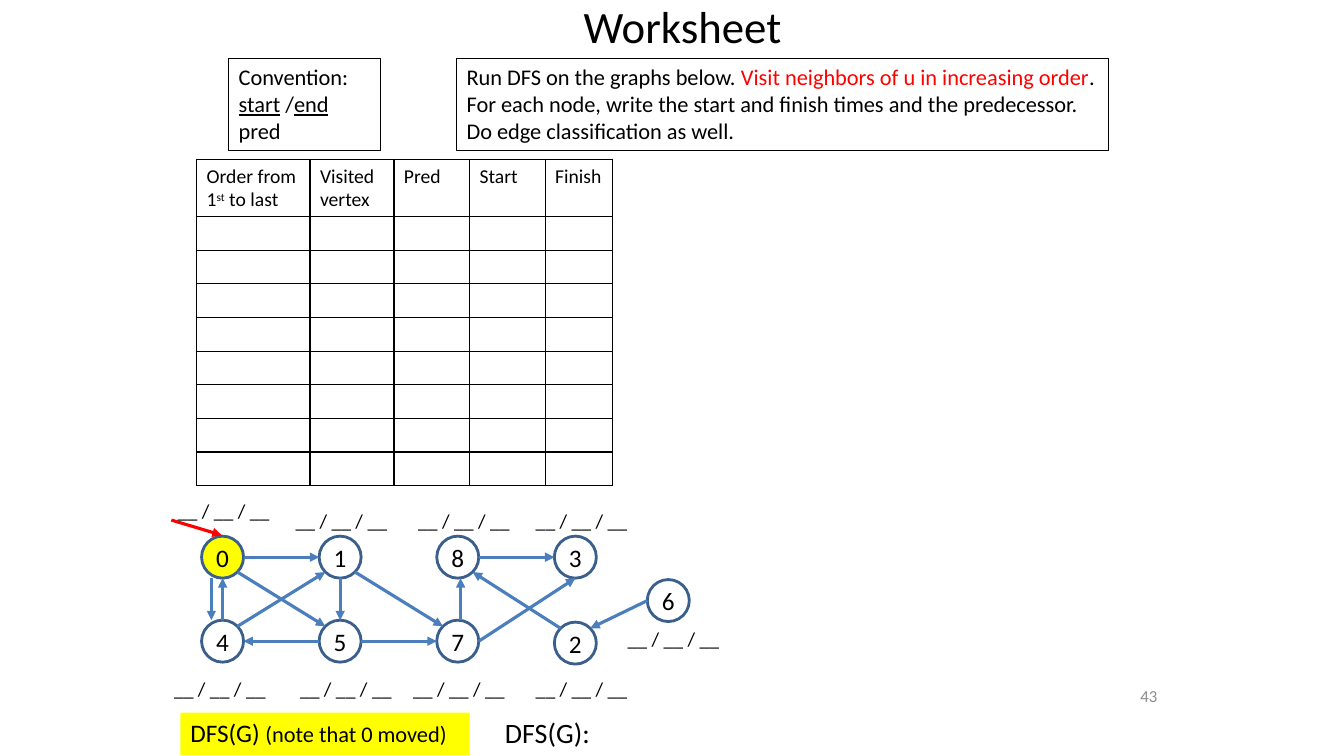
from lxml.etree import SubElement
from pptx import Presentation
from pptx.dml.color import RGBColor
from pptx.enum.shapes import MSO_CONNECTOR, MSO_SHAPE
from pptx.enum.text import MSO_ANCHOR, MSO_AUTO_SIZE, PP_ALIGN
from pptx.oxml import parse_xml
from pptx.oxml.ns import nsdecls, qn
from pptx.util import Pt

COLORS = {
    "text": "000000", "alert": "FF0000", "highlight": "FFFF00",
    "ring": "3A5F8C", "edge": "4B7EBC", "page": "8C8C8C",
}
FONT = "Calibri"
BLANKS = "__ / __ / __"

# Graph geometry: node centres, compass points on the ring
RADIUS = 15
DIAGONAL = RADIUS * 0.707
COLUMNS = [159 + 84 * i for i in range(4)]
TOP_ROW, BOTTOM_ROW = 398, 458
NODES = {
    "0": (COLUMNS[0], TOP_ROW), "1": (COLUMNS[1], TOP_ROW),
    "8": (COLUMNS[2], TOP_ROW), "3": (COLUMNS[3], TOP_ROW),
    "4": (COLUMNS[0], BOTTOM_ROW), "5": (COLUMNS[1], BOTTOM_ROW),
    "7": (COLUMNS[2], BOTTOM_ROW), "2": (COLUMNS[3], BOTTOM_ROW + 1.4),
    "6": (477.4, 429),
}
COMPASS = {
    "N": (0, -RADIUS), "S": (0, RADIUS), "W": (-RADIUS, 0), "E": (RADIUS, 0),
    "NW": (-DIAGONAL, -DIAGONAL), "NE": (DIAGONAL, -DIAGONAL),
    "SW": (-DIAGONAL, DIAGONAL), "SE": (DIAGONAL, DIAGONAL),
}
# Source, leaving point, target, arriving point, sideways shift
EDGES = [
    ("0", "E", "1", "W", 0), ("5", "W", "4", "E", 0), ("5", "E", "7", "W", 0),
    ("7", "E", "3", "S", 0), ("8", "E", "3", "W", 0), ("4", "N", "0", "S", 0),
    ("1", "S", "5", "N", 0), ("7", "N", "8", "S", 2), ("4", "NE", "1", "SW", 0),
    ("0", "SE", "5", "NW", 0), ("1", "SE", "7", "NW", 0),
    ("0", "S", "4", "N", -8), ("2", "NW", "8", "SE", 0), ("6", "W", "2", "NE", 0),
]
TIME_LABELS = [
    (120, 352.8), (204, 360), (291.6, 360), (375.6, 360),
    (117.2, 480), (207.2, 480), (288, 480), (375.6, 480), (441.2, 444),
]
HEADERS = [
    [("Order from 1", {}), ("st", {"superscript": True}), (" to last", {})],
    [("Visited vertex", {})], [("Pred", {})], [("Start", {})], [("Finish", {})],
]
COLUMN_WIDTHS = [81, 60, 54, 54, 48]
BLANK_ROWS, HEADER_HEIGHT, ROW_HEIGHT = 8, 40.5, 24


def rgb(name):
    return RGBColor.from_string(COLORS[name])


def write(paragraph, pieces, size, color="text"):
    """Fill a paragraph with (words, style) pieces."""
    for words, style in pieces:
        run = paragraph.add_run()
        run.text = words
        run.font.name = FONT
        run.font.size = Pt(style.get("size", size))
        run.font.color.rgb = rgb(style.get("color", color))
        if style.get("underline"):
            run.font.underline = True
        if style.get("superscript"):
            run.font._element.set("baseline", "30000")


def add_text(slide, box, lines, size, color="text", wrap=True, fill=None, border=False):
    area = slide.shapes.add_textbox(*map(Pt, box))
    frame = area.text_frame
    frame.word_wrap = wrap
    for index, pieces in enumerate(lines):
        paragraph = frame.add_paragraph() if index else frame.paragraphs[0]
        write(paragraph, pieces, size, color)
    if fill:
        area.fill.solid()
        area.fill.fore_color.rgb = rgb(fill)
    if border:
        area.line.color.rgb = rgb("text")
        area.line.width = Pt(0.75)
    return frame


def fill_placeholder(placeholder, box, words, size):
    placeholder.left, placeholder.top, placeholder.width, placeholder.height = map(Pt, box)
    frame = placeholder.text_frame
    frame.auto_size = MSO_AUTO_SIZE.NONE
    frame.vertical_anchor = MSO_ANCHOR.TOP
    paragraph = frame.paragraphs[0]
    paragraph.alignment = PP_ALIGN.LEFT
    write(paragraph, [(words, {})], size)
    return paragraph


def add_node(slide, vertex):
    x, y = NODES[vertex]
    node = slide.shapes.add_shape(
        MSO_SHAPE.OVAL, Pt(x - RADIUS), Pt(y - RADIUS), Pt(2 * RADIUS), Pt(2 * RADIUS))
    node.shadow.inherit = False
    if vertex == "0":
        node.fill.solid()
        node.fill.fore_color.rgb = rgb("highlight")
    else:
        node.fill.background()
    node.line.color.rgb = rgb("ring")
    node.line.width = Pt(2)
    frame = node.text_frame
    frame.margin_left = frame.margin_right = frame.margin_top = frame.margin_bottom = 0
    frame.paragraphs[0].alignment = PP_ALIGN.CENTER
    write(frame.paragraphs[0], [(vertex, {})], 18)


def add_arrow(slide, start, end, color="edge"):
    arrow = slide.shapes.add_connector(MSO_CONNECTOR.STRAIGHT, *map(Pt, (*start, *end)))
    arrow.line.color.rgb = rgb(color)
    arrow.line.width = Pt(2.25)
    SubElement(arrow.line._get_or_add_ln(), qn("a:tailEnd"), type="triangle")
    SubElement(arrow._element.spPr, qn("a:effectLst"))


def ring_point(vertex, direction, shift):
    (x, y), (dx, dy) = NODES[vertex], COMPASS[direction]
    return x + dx + shift, y + dy


def outline_cell(cell):
    properties = cell._tc.get_or_add_tcPr()
    for index, side in enumerate(("lnL", "lnR", "lnT", "lnB")):
        properties.insert(index, parse_xml(
            f'<a:{side} {nsdecls("a")} w="12700"><a:solidFill>'
            f'<a:srgbClr val="{COLORS["text"]}"/></a:solidFill></a:{side}>'))


def add_visit_table(slide):
    height = HEADER_HEIGHT + BLANK_ROWS * ROW_HEIGHT
    table = slide.shapes.add_table(
        BLANK_ROWS + 1, len(HEADERS), Pt(140.4), Pt(113.8),
        Pt(sum(COLUMN_WIDTHS)), Pt(height)).table
    table.first_row = table.horz_banding = False
    for column, width in zip(table.columns, COLUMN_WIDTHS):
        column.width = Pt(width)
    for index, row in enumerate(table.rows):
        row.height = Pt(ROW_HEIGHT if index else HEADER_HEIGHT)
        for cell, header in zip(row.cells, HEADERS):
            cell.fill.background()
            outline_cell(cell)
            paragraph = cell.text_frame.paragraphs[0]
            if index:
                SubElement(paragraph._p, qn("a:endParaRPr"), sz="1400")
            else:
                write(paragraph, header, 14)


def main():
    deck = Presentation()
    deck.slide_width, deck.slide_height = Pt(960), Pt(540)
    slide = deck.slides.add_slide(deck.slide_layouts[1])

    # Title and closing heading
    fill_placeholder(slide.shapes.title, (409.7, -4.3, 157, 46), "Worksheet", 32)
    heading = fill_placeholder(
        slide.placeholders[1], (353.5, 507.6, 217.4, 27.4), "DFS(G):", 20)
    heading_format = heading._p.get_or_add_pPr()
    heading_format.set("marL", "0")
    heading_format.set("indent", "0")
    SubElement(heading_format, qn("a:buNone"))

    # Convention and instructions
    add_text(slide, (163.4, 41.8, 108.7, 65.5), [
        [("Convention:", {})],
        [("start", {"underline": True}), (" /", {}), ("end", {"underline": True})],
        [("pred", {})],
    ], 16, border=True)
    add_text(slide, (326.2, 41.8, 465.8, 65.5), [
        [("Run DFS on the graphs below. ", {}),
         ("Visit neighbors of u in increasing order", {"color": "alert"}), (".", {})],
        [("For each node, write the start and finish times and the predecessor.", {})],
        [("Do edge classification as well.", {})],
    ], 16, border=True)

    add_visit_table(slide)

    # Graph
    for vertex in NODES:
        add_node(slide, vertex)
    for source, leaving, target, arriving, shift in EDGES:
        add_arrow(slide, ring_point(source, leaving, shift),
                  ring_point(target, arriving, shift))
    add_arrow(slide, (122.4, 371.5), (158.4, 382.3), "alert")
    for left, top in TIME_LABELS:
        add_text(slide, (left, top, 80.6, 24.2), [[(BLANKS, {})]], 14, wrap=False)

    # Note and page number
    note = add_text(slide, (128.9, 509, 206.6, 30.2), [
        [("DFS(G) ", {}), ("(note that 0 moved)", {"size": 16})]], 18, fill="highlight")
    note.paragraphs[0].space_before = Pt(3.6)
    page = add_text(slide, (666, 482.4, 167.8, 28.8), [[("43", {})]], 12, "page")
    page.vertical_anchor = MSO_ANCHOR.MIDDLE
    page.paragraphs[0].alignment = PP_ALIGN.RIGHT

    deck.save("out.pptx")


if __name__ == "__main__":
    main()
